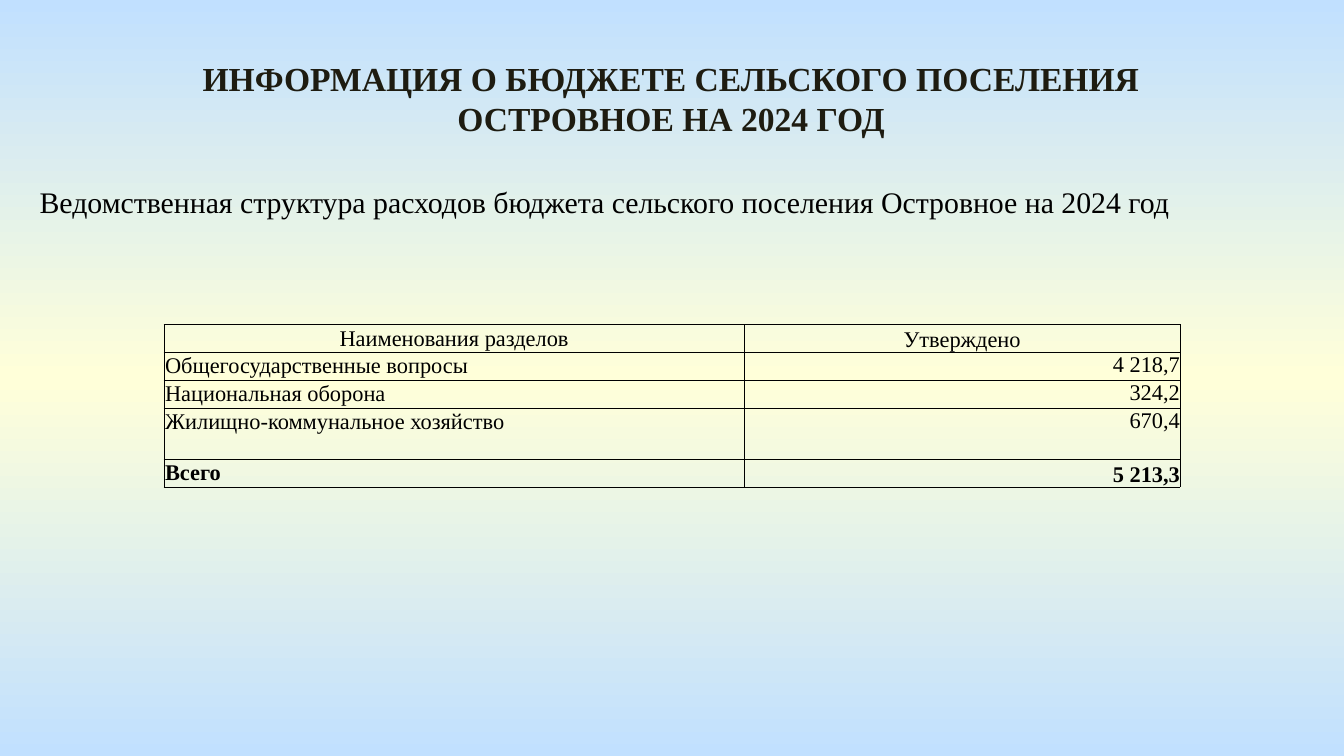
import copy
import pptx
import pptx.util
import pptx.oxml
import pptx.oxml.ns
import pptx.dml.color
import pptx.enum.text

Cm, Pt = pptx.util.Cm, pptx.util.Pt
Align = pptx.enum.text.PP_ALIGN
Anchor = pptx.enum.text.MSO_ANCHOR

# Content
TITLE = "ИНФОРМАЦИЯ О БЮДЖЕТЕ СЕЛЬСКОГО ПОСЕЛЕНИЯ ОСТРОВНОЕ НА 2024 ГОД"
INTRO = "Ведомственная структура расходов бюджета сельского поселения Островное на 2024 год"
ROWS = [
    ("Наименования разделов", "Утверждено"),
    ("Общегосударственные вопросы", "4 218,7"),
    ("Национальная оборона", "324,2"),
    ("Жилищно-коммунальное хозяйство", "670,4"),
    ("Всего", "5 213,3"),
]
COLS = [10.97, 8.23]
HIGHS = [0.5, 0.5, 0.5, 0.95, 0.5]
FONT = "Times New Roman"
HEX = {"edge": "C1E0FF", "mid": "FFFFD9", "title": "1E1C11", "text": "000000"}


def rgb(key):
    return pptx.dml.color.RGBColor.from_string(HEX[key])


def style(frame, size, align, color="text", bold=False):
    par = frame.paragraphs[0]
    par.alignment = align
    font = par.runs[0].font
    font.name, font.size, font.bold = FONT, Pt(size), bold
    font.color.rgb = rgb(color)


def add_text(slide, text, box, *look):
    frame = slide.shapes.add_textbox(*map(Cm, box)).text_frame
    frame.word_wrap = True
    frame.text = text
    style(frame, *look)


def add_lines(cell):
    props = cell._tc.get_or_add_tcPr()
    for side in ("lnL", "lnR", "lnT", "lnB"):
        props.append(pptx.oxml.parse_xml(
            f'<a:{side} {pptx.oxml.ns.nsdecls("a")} w="{Pt(0.5)}"><a:solidFill>'
            f'<a:srgbClr val="{HEX["text"]}"/></a:solidFill></a:{side}>'))


deck = pptx.Presentation()
deck.slide_width, deck.slide_height = Cm(25.4), Cm(14.29)
slide = deck.slides.add_slide(deck.slide_layouts[6])

# Background: edge colour, middle colour, edge colour
fill = slide.background.fill
fill.gradient()
fill.gradient_angle = 90
stops = slide.element.find(".//" + pptx.oxml.ns.qn("a:gsLst"))
stops.append(copy.deepcopy(stops[0]))
for stop, key, place in zip(fill.gradient_stops, ("edge", "mid", "edge"), (0, 0.5, 1)):
    stop.color.rgb = rgb(key)
    stop.position = place

# Heading and intro
add_text(slide, TITLE, (2.87, 0.97, 19.63, 1.8), 18, Align.CENTER, "title", True)
add_text(slide, INTRO, (0.5, 3.35, 24.4, 1.63), 16, Align.JUSTIFY)

# Budget table
table = slide.shapes.add_table(
    len(ROWS), len(COLS), Cm(3.1), Cm(6.14), Cm(sum(COLS)), Cm(sum(HIGHS))).table
table.first_row = table.horz_banding = False
for col, wide in zip(table.columns, COLS):
    col.width = Cm(wide)
last = len(ROWS) - 1
for r, (row, high) in enumerate(zip(ROWS, HIGHS)):
    table.rows[r].height = Cm(high)
    for c, text in enumerate(row):
        cell = table.cell(r, c)
        cell.text_frame.text = text
        gap = Cm(0.02 if r == 0 or c == 0 else 0)
        cell.margin_left = cell.margin_right = cell.margin_top = gap
        cell.margin_bottom = 0
        if c == 1 and r in (0, last):
            cell.vertical_anchor = Anchor.BOTTOM
        else:
            cell.vertical_anchor = Anchor.MIDDLE if r == 0 else Anchor.TOP
        align = Align.CENTER if r == 0 else (Align.LEFT, Align.RIGHT)[c]
        style(cell.text_frame, 12, align, bold=r == last)
        add_lines(cell)
        cell.fill.background()

deck.save("out.pptx")
